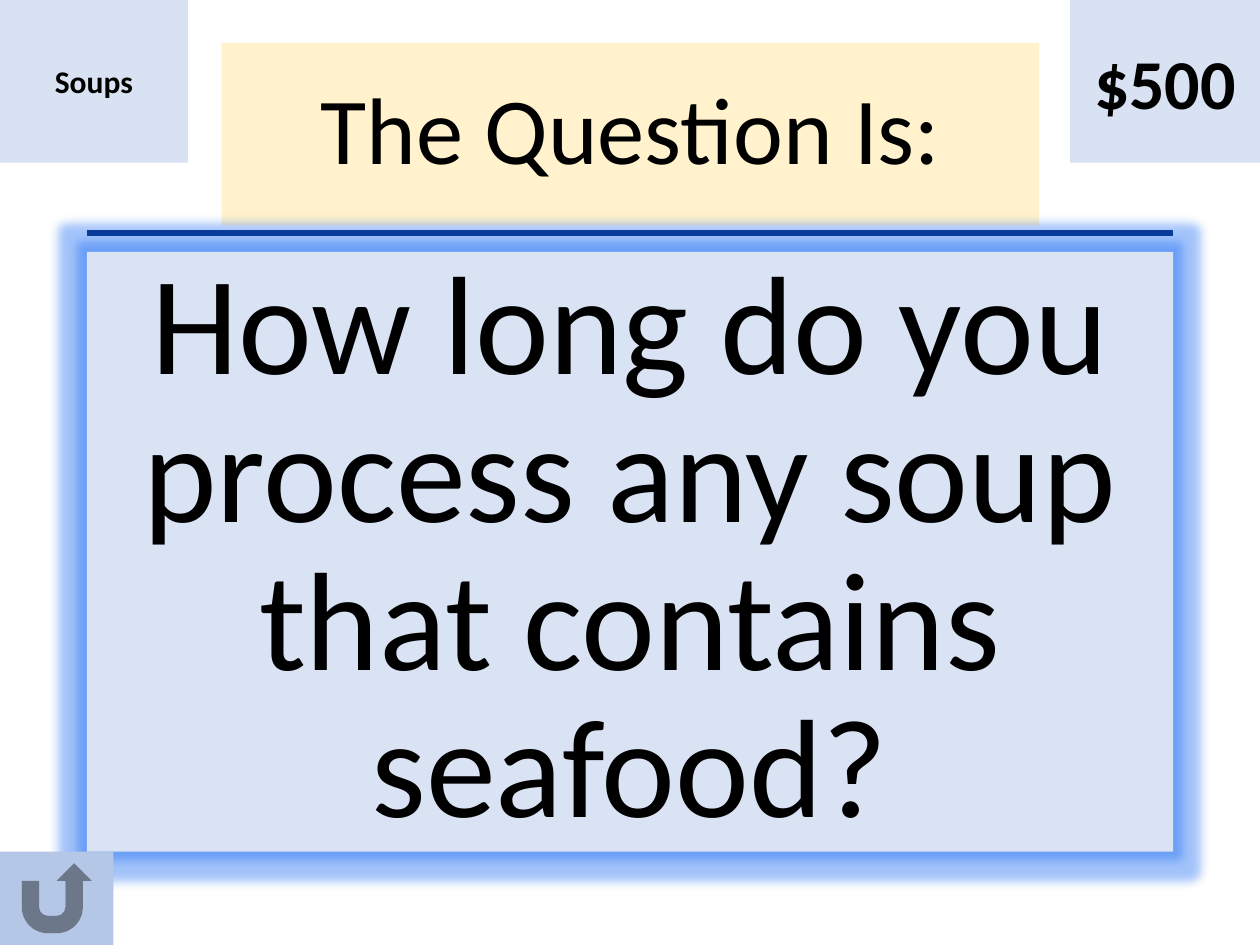
from lxml.etree import SubElement
from pptx import Presentation
from pptx.dml.color import RGBColor
from pptx.enum.shapes import MSO_CONNECTOR, MSO_SHAPE
from pptx.enum.text import MSO_ANCHOR, MSO_AUTO_SIZE, PP_ALIGN
from pptx.oxml.ns import qn
from pptx.util import Inches, Pt

BLACK = RGBColor(0x00, 0x00, 0x00)
NAVY = RGBColor(0x00, 0x20, 0x60)
CREAM = RGBColor(0xFF, 0xF2, 0xCC)
PALE = RGBColor(0xDA, 0xE3, 0xF3)
BLUE = RGBColor(0xB4, 0xC7, 0xE7)
GLOW = RGBColor(0x18, 0x69, 0xF4)


def paint(shape, color, alpha=None):
    shape.fill.solid()
    shape.fill.fore_color.rgb = color
    shape.line.fill.background()
    if alpha is not None:
        tint = shape.fill._xPr.find(qn("a:solidFill"))[0]
        SubElement(tint, qn("a:alpha"), val=str(alpha * 1000))


def write(shape, text, size, bold=False, spacing=1.0):
    frame = shape.text_frame
    frame.text = text
    frame.word_wrap = True
    frame.auto_size = MSO_AUTO_SIZE.NONE
    frame.vertical_anchor = MSO_ANCHOR.MIDDLE
    line = frame.paragraphs[0]
    line.alignment = PP_ALIGN.CENTER
    line.line_spacing = spacing
    line.space_before = Pt(0)
    font = line.runs[0].font
    font.name = "Calibri"
    font.size = Pt(size)
    font.bold = bold
    font.color.rgb = BLACK


def add_box(slide, kind, box, color, alpha=None):
    shape = slide.shapes.add_shape(kind, *map(Inches, box))
    shape.shadow.inherit = False
    paint(shape, color, alpha)
    return shape


def add_glow(shape, radius, color, alpha):
    effects = shape._element.spPr.find(qn("a:effectLst"))
    glow = SubElement(effects, qn("a:glow"), rad=str(Pt(radius)))
    tint = SubElement(glow, qn("a:srgbClr"), val=str(color))
    SubElement(tint, qn("a:alpha"), val=str(alpha * 1000))


def add_title(slide, box, text):
    title = slide.shapes.title
    title.left, title.top, title.width, title.height = map(Inches, box)
    paint(title, CREAM)
    write(title, text, size=54, spacing=0.9)


def add_rule(slide, left, right, top):
    ends = map(Inches, (left, top, right, top))
    rule = slide.shapes.add_connector(MSO_CONNECTOR.STRAIGHT, *ends)
    rule.line.color.rgb = NAVY
    rule.line.width = Pt(3)
    SubElement(rule._element.spPr, qn("a:effectLst"))


def add_question(slide, box, text):
    panel = add_box(slide, MSO_SHAPE.RECTANGLE, box, PALE)
    add_glow(panel, radius=11, color=GLOW, alpha=40)
    write(panel, text, size=80, spacing=0.88)


def add_label(slide, box, text, size):
    label = add_box(slide, MSO_SHAPE.ACTION_BUTTON_CUSTOM, box, BLUE, alpha=50)
    write(label, text, size=size, bold=True)


def main():
    deck = Presentation()
    deck.slide_width, deck.slide_height = Inches(10), Inches(7.5)
    slide = deck.slides.add_slide(deck.slide_layouts[5])
    add_rule(slide, 0.69, 9.31, 1.85)
    add_title(slide, (1.76, 0.34, 6.49, 1.45), "The Question Is:")
    add_question(slide, (0.69, 2, 8.62, 4.76),
                 "How long do you process any soup that contains seafood?")
    add_box(slide, MSO_SHAPE.ACTION_BUTTON_RETURN, (0, 6.76, 0.9, 0.74), BLUE)
    add_label(slide, (0, 0, 1.49, 1.29), "Soups", size=18)
    add_label(slide, (8.49, 0, 1.51, 1.29), "$500", size=40)
    deck.save("out.pptx")


if __name__ == "__main__":
    main()
